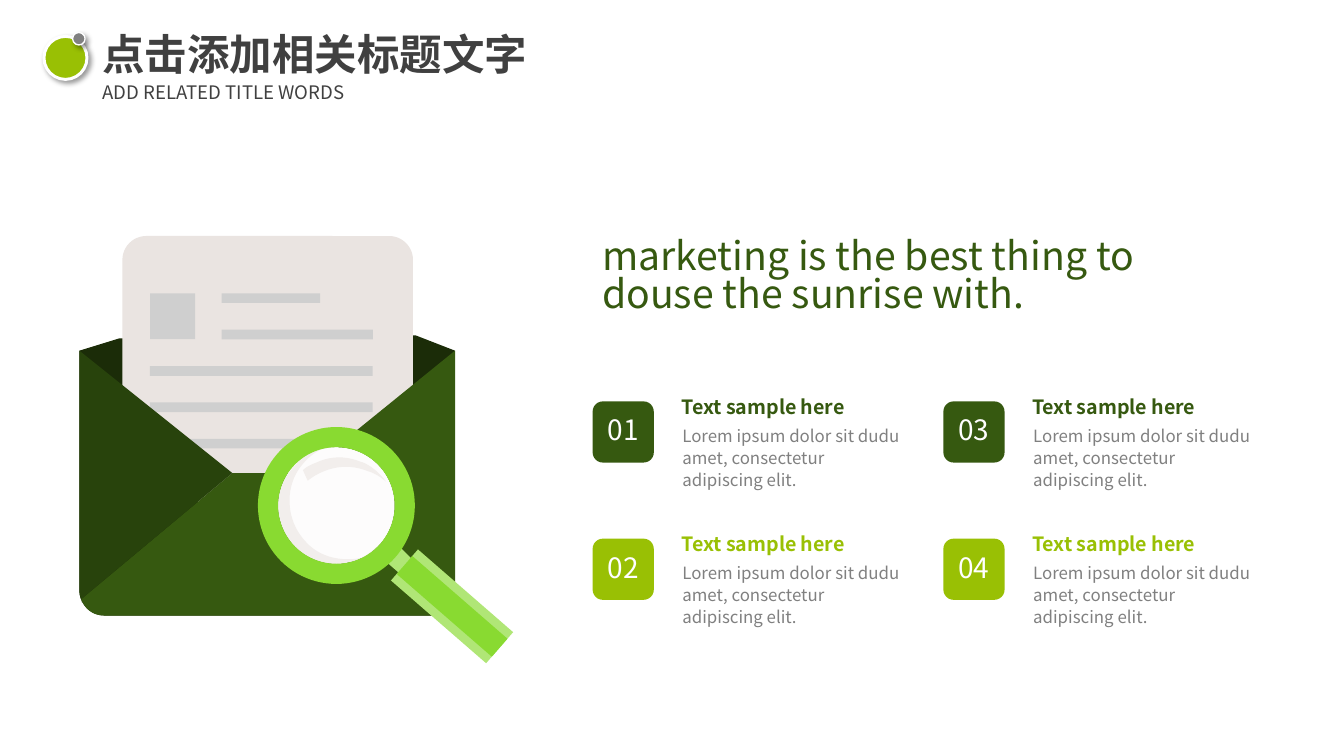
from lxml import etree
from pptx import Presentation
from pptx.dml.color import RGBColor
from pptx.enum.shapes import MSO_SHAPE
from pptx.enum.text import MSO_ANCHOR, PP_ALIGN
from pptx.oxml.ns import qn
from pptx.util import Pt

RECT = MSO_SHAPE.RECTANGLE
ROUNDED = MSO_SHAPE.ROUNDED_RECTANGLE
OVAL = MSO_SHAPE.OVAL
DONUT = MSO_SHAPE.DONUT
LEFT, CENTER = PP_ALIGN.LEFT, PP_ALIGN.CENTER
TOP, MIDDLE = MSO_ANCHOR.TOP, MSO_ANCHOR.MIDDLE

FONT = "Noto Sans CJK SC"
COLORS = {
    "white": "FFFFFF", "title": "404040", "gray": "808080",
    "forest": "365910", "lime": "99C004",
    "flap": "28430C", "inside": "1B2C08",
    "paper": "EAE4E1", "print": "CFCFCF",
    "rim": "89DA31", "handle": "B0E676",
    "glass": "FDFCFC", "glint": "F2EEEC",
}
CURVE_STEPS = 10


def curve_points(start, curve):
    """Points along a cubic Bezier; curve holds two controls and the end."""
    x1, y1, x2, y2, x3, y3 = curve
    points = []
    for step in range(1, CURVE_STEPS + 1):
        t = step / CURVE_STEPS
        u = 1 - t
        weights = (u ** 3, 3 * u * u * t, 3 * u * t * t, t ** 3)
        points.append((
            sum(w * x for w, x in zip(weights, (start[0], x1, x2, x3))),
            sum(w * y for w, y in zip(weights, (start[1], y1, y2, y3))),
        ))
    return points


class SlideBuilder:
    def __init__(self, slide):
        self.shapes = slide.shapes

    def color(self, name):
        return RGBColor.from_string(COLORS[name])

    def paint(self, shape, fill):
        shape.shadow.inherit = False
        shape.fill.solid()
        shape.fill.fore_color.rgb = self.color(fill)
        shape.line.fill.background()
        return shape

    def shape(self, kind, x, y, w, h, fill, adjust=None, rotation=0):
        shape = self.shapes.add_shape(kind, Pt(x), Pt(y), Pt(w), Pt(h))
        if adjust is not None:
            shape.adjustments[0] = adjust
        shape.rotation = rotation
        return self.paint(shape, fill)

    def outline(self, fill, start, *segments):
        """Closed outline; a pair is a straight step, six numbers a curve."""
        points = [start]
        for segment in segments:
            points += [segment] if len(segment) == 2 else curve_points(points[-1], segment)
        emu = [(Pt(x), Pt(y)) for x, y in points]
        builder = self.shapes.build_freeform(*emu[0], scale=1.0)
        builder.add_line_segments(emu[1:], close=True)
        return self.paint(builder.convert_to_shape(), fill)

    def button(self, x, y, size, fill, border):
        """Circle with a white border and a soft shadow."""
        circle = self.shape(OVAL, x, y, size, size, fill)
        circle.line.color.rgb = self.color("white")
        circle.line.width = Pt(border)
        effects = circle._element.spPr.find(qn("a:effectLst"))
        shadow = etree.SubElement(
            effects, qn("a:outerShdw"), blurRad=str(Pt(4)), dist=str(Pt(3)),
            dir="2700000", algn="tl", rotWithShape="0")
        black = etree.SubElement(shadow, qn("a:srgbClr"), val="000000")
        etree.SubElement(black, qn("a:alpha"), val="40000")

    def set_text(self, shape, text, size, color, bold=False, spacing=1.0,
                 align=LEFT, anchor=TOP, insets=(7.2, 3.6), wrap=True):
        frame = shape.text_frame
        frame.word_wrap = wrap
        frame.vertical_anchor = anchor
        frame.margin_left = frame.margin_right = Pt(insets[0])
        frame.margin_top = frame.margin_bottom = Pt(insets[1])
        frame.text = text
        paragraph = frame.paragraphs[0]
        paragraph.alignment = align
        paragraph.line_spacing = spacing
        font = paragraph.runs[0].font
        font.name, font.size, font.bold = FONT, Pt(size), bold
        font.color.rgb = self.color(color)
        etree.SubElement(font._element, qn("a:ea"), typeface=FONT)

    def text(self, x, y, w, h, text, size, color, **style):
        box = self.shapes.add_textbox(Pt(x), Pt(y), Pt(w), Pt(h))
        self.set_text(box, text, size, color, **style)


def draw_envelope(page):
    page.outline("inside", (313.2, 252.7), (342.7, 264.2), (342.7, 445),
                 (342.7, 455, 334.8, 463.7, 324.7, 463.7), (78.5, 463.7),
                 (68.4, 463.7, 59.8, 455, 59.8, 445), (59.8, 264.2), (90, 254.9))
    page.shape(ROUNDED, 92.2, 177.8, 218.9, 200.2, "paper", adjust=0.09)
    margin, indent, right = 113, 167, 280.8
    row_spans = [(indent, 241.2), (indent, right)] + [(margin, right)] * 3
    for row, (start, end) in enumerate(row_spans):
        page.shape(RECT, start, 221 + row * 27.4, end - start, 7.3, "print")
    page.outline("forest", (175, 356.4), (61.2, 451.4),
                 (64.1, 459.4, 70.6, 463.7, 78.5, 463.7), (324.7, 463.7),
                 (333.4, 463.7, 339.8, 459.4, 342, 451.4), (229.7, 356.4))
    page.outline("forest", (229, 356.4), (342, 451.4), (341.3, 454.3),
                 (342, 451.4, 342.7, 448.6, 342.7, 445), (342.7, 264.2))
    page.outline("flap", (175, 356.4), (59.8, 264.2), (59.8, 445),
                 (59.8, 448.6, 61.2, 451.4, 61.9, 454.3), (61.2, 451.4))
    page.shape(RECT, margin, 221, 34, 34.5, "print")


def draw_magnifier(page):
    center_x, center_y, rim, lens = 253.4, 380.8, 59.1, 43.9
    page.shape(OVAL, center_x - lens, center_y - lens, 2 * lens, 2 * lens, "glass")
    page.outline("glint", (224.6, 414),
                 (233.3, 421.2, 244.1, 425.5, 256.3, 424.8),
                 (259.9, 424.1, 262.8, 423.4, 266.4, 422.6),
                 (272.9, 420.5, 278.6, 416.9, 283.7, 411.8),
                 (280.8, 415.4, 277.2, 417.6, 274.3, 419.8),
                 (270.7, 420.5, 267.8, 421.2, 264.2, 421.2),
                 (252.7, 421.9, 241.2, 418.3, 233.3, 411.1),
                 (224.6, 403.2, 218.9, 392.4, 218.2, 380.2),
                 (217.4, 368.6, 221, 357.1, 229, 348.5),
                 (232.6, 344.2, 236.9, 341.3, 241.9, 338.4), (247.7, 337),
                 (236.9, 339.1, 228.2, 343.4, 221, 352.1),
                 (213.1, 360.7, 208.8, 372.2, 209.5, 383.8),
                 (211, 396, 216, 406.1, 224.6, 414))
    page.outline("handle", (310.3, 431.3), (308.2, 434.2, 303.8, 434.2, 300.2, 431.3),
                 (290.2, 422.6), (287.3, 420.5, 286.6, 415.4, 289.4, 411.8),
                 (292.3, 409, 297.4, 409, 300.2, 411.1), (309.6, 420.5),
                 (313.2, 423.4, 313.9, 427.7, 311, 430.6))
    page.shape(DONUT, center_x - rim, center_y - rim, 2 * rim, 2 * rim, "rim",
               adjust=(rim - lens) / (2 * rim))
    for thickness, color in ((31, "handle"), (18, "rim")):
        page.shape(RECT, 293, 456.8 - thickness / 2, 95, thickness, color, rotation=41)
    page.outline("glint", (231.8, 362.2),
                 (235.4, 359.3, 239, 357.1, 244.1, 355),
                 (254.9, 350.6, 266.4, 350.6, 277.2, 355),
                 (282.2, 356.4, 286.6, 359.3, 290.9, 362.9),
                 (288.7, 360, 286.6, 357.8, 283.7, 355),
                 (280.1, 352.1, 276.5, 349.2, 271.4, 347.8),
                 (260.6, 343.4, 249.1, 343.4, 238.3, 348.5),
                 (234.7, 349.9, 231.1, 351.4, 228.2, 354.2))


def draw_points(page):
    for index in range(4):
        column, row = divmod(index, 2)
        x, y = 446.4 + column * 264.2, 302.4 + row * 103.4
        color = ("forest", "lime")[row]
        badge = page.shape(ROUNDED, x, y, 46.1, 46.1, color)
        page.set_text(badge, f"{index + 1:02}", 21.1, "white", spacing=0.89,
                      align=CENTER, anchor=MIDDLE, insets=(0, 0), wrap=False)
        page.text(x + 60.5, y + 13, 182.9, 45,
                  "Lorem ipsum dolor sit dudu amet, consectetur adipiscing elit.",
                  12.7, "gray", spacing=1.1)
        page.text(x + 59.8, y - 8.6, 184.3, 25.2, "Text sample here", 14.8, color, bold=True)


def main():
    deck = Presentation()
    deck.slide_width, deck.slide_height = Pt(1012.32), Pt(569.52)
    page = SlideBuilder(deck.slides.add_slide(deck.slide_layouts[6]))
    draw_envelope(page)
    draw_magnifier(page)
    page.text(446.4, 177.8, 493.2, 64.8,
              "marketing is the best thing to douse the sunrise with.",
              29.5, "forest", spacing=0.8)
    draw_points(page)
    page.text(77, 20.9, 432.7, 38.9, "点击添加相关标题文字", 32, "title",
              bold=True, insets=(0, 0))
    page.text(77, 61.2, 261.4, 17.3, "ADD RELATED TITLE WORDS", 14, "title", insets=(0, 0))
    page.button(33.1, 27.4, 32.4, "lime", 2.25)
    page.button(54.7, 24.5, 9.4, "gray", 1)
    deck.save("out.pptx")


if __name__ == "__main__":
    main()
